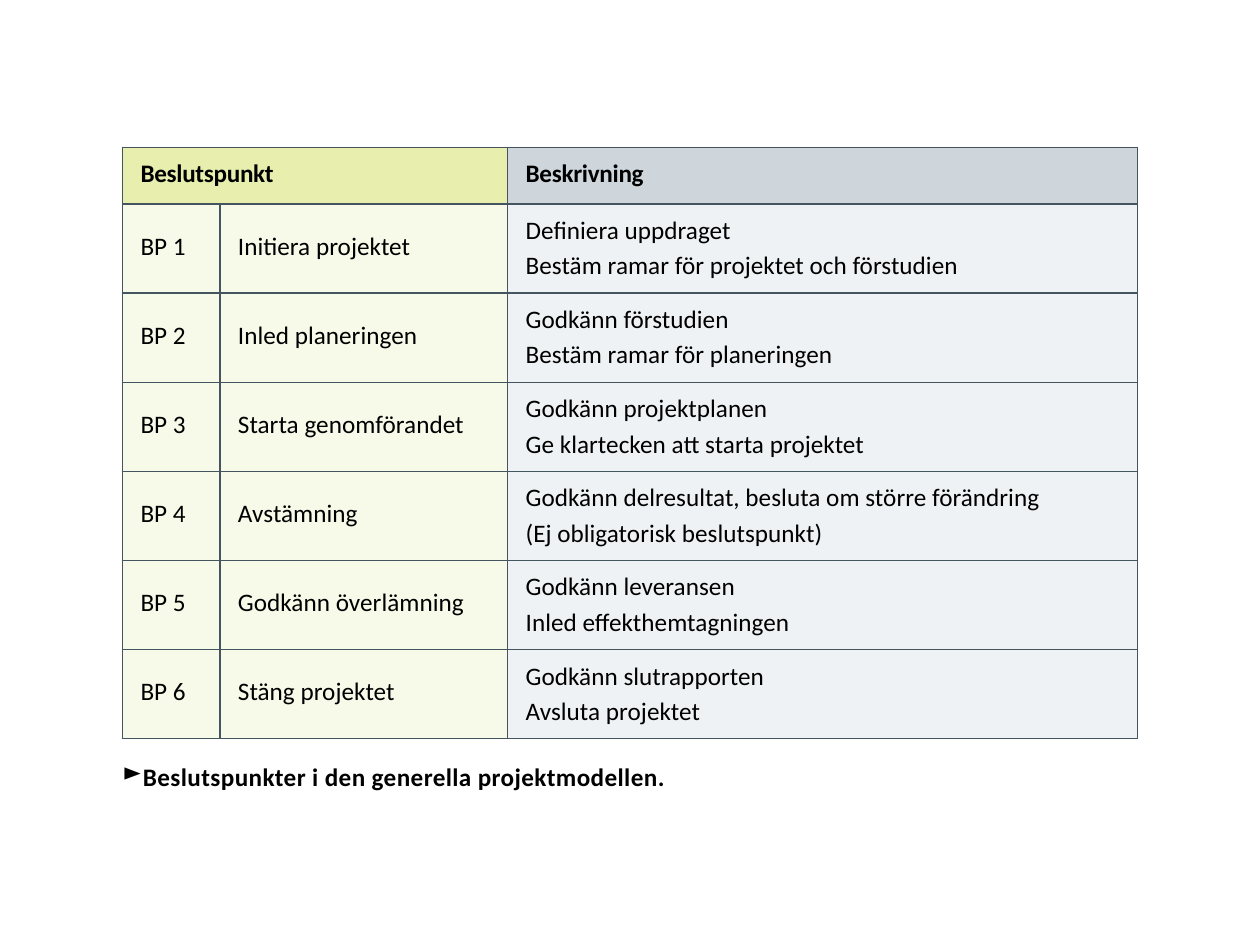
import dataclasses

import lxml.etree
import pptx
import pptx.dml.color
import pptx.enum.text
import pptx.oxml.ns
import pptx.util

Inches = pptx.util.Inches
qn = pptx.oxml.ns.qn


@dataclasses.dataclass(frozen=True)
class Theme:
    font: str = "Calibri"
    size: float = 8
    text: str = "000000"
    border: str = "45555F"
    border_width: float = 0.5
    point_head: str = "E8EEAE"
    point_body: str = "F7FAE8"
    description_head: str = "CED6DC"
    description_body: str = "EFF2F4"


def rgb(value):
    return pptx.dml.color.RGBColor.from_string(value)


def write(p, text, *, theme, bold=False, spacing=0):
    """Add a run; spacing is in hundredths of a point."""
    r = p.add_run()
    r.text = text
    r.font.name = theme.font
    r.font.size = pptx.util.Pt(theme.size)
    r.font.bold = bold
    r.font.color.rgb = rgb(theme.text)
    if spacing:
        r.font._element.set("spc", str(spacing))


class SlideBuilder:
    def __init__(self, prs, theme):
        self.theme = theme
        self.slide = prs.slides.add_slide(prs.slide_layouts[6])

    def table(self, left, top, widths, heights):
        shape = self.slide.shapes.add_table(
            len(heights), len(widths), left, top, sum(widths), sum(heights))
        table = shape.table
        table.first_row = table.horz_banding = False
        for column, width in zip(table.columns, widths):
            column.width = width
        for row, height in zip(table.rows, heights):
            row.height = height
        return table

    def cell(self, cell, lines, fill, top=0.05, **style):
        cell.margin_left = Inches(0.08)
        cell.margin_right = cell.margin_bottom = 0
        cell.margin_top = Inches(top)
        cell.fill.solid()
        cell.fill.fore_color.rgb = rgb(fill)
        self.borders(cell)
        tf = cell.text_frame
        for i, line in enumerate(lines):
            p = tf.add_paragraph() if i else tf.paragraphs[0]
            if i:
                p.space_before = pptx.util.Pt(1.4)
            write(p, line, theme=self.theme, **style)

    def borders(self, cell):
        tc_pr = cell._tc.get_or_add_tcPr()
        width = str(pptx.util.Pt(self.theme.border_width))
        for i, side in enumerate(("a:lnL", "a:lnR", "a:lnT", "a:lnB")):
            ln = lxml.etree.Element(qn(side), w=width)
            fill = lxml.etree.SubElement(ln, qn("a:solidFill"))
            lxml.etree.SubElement(fill, qn("a:srgbClr"), val=self.theme.border)
            tc_pr.insert(i, ln)

    def caption(self, text, left, top, width, height):
        tf = self.slide.shapes.add_textbox(left, top, width, height).text_frame
        tf.word_wrap = True
        tf.margin_left = tf.margin_right = tf.margin_bottom = 0
        tf.margin_top = Inches(0.02)
        p = tf.paragraphs[0]
        p_pr = p._p.get_or_add_pPr()
        p_pr.set("marL", str(Inches(0.09)))
        p_pr.set("indent", str(Inches(-0.08)))
        lxml.etree.SubElement(p_pr, qn("a:buChar"), char="►")
        tabs = lxml.etree.SubElement(p_pr, qn("a:tabLst"))
        lxml.etree.SubElement(tabs, qn("a:tab"), pos=str(Inches(0.09)), algn="l")
        write(p, text, theme=self.theme, bold=True, spacing=10)


DECISIONS = [
    ("Initiera projektet",
     ["Definiera uppdraget", "Bestäm ramar för projektet och förstudien"]),
    ("Inled planeringen",
     ["Godkänn förstudien", "Bestäm ramar för planeringen"]),
    ("Starta genomförandet",
     ["Godkänn projektplanen", "Ge klartecken att starta projektet"]),
    ("Avstämning",
     ["Godkänn delresultat, besluta om större förändring",
      "(Ej obligatorisk beslutspunkt)"]),
    ("Godkänn överlämning",
     ["Godkänn leveransen", "Inled effekthemtagningen"]),
    ("Stäng projektet",
     ["Godkänn slutrapporten", "Avsluta projektet"]),
]


def main():
    prs = pptx.Presentation()
    prs.slide_width, prs.slide_height = Inches(5.56), Inches(4.17)
    theme = Theme()
    s = SlideBuilder(prs, theme)

    # Table grid: a header and equal rows for the decision points
    widths = [Inches(w) for w in (0.43, 1.27, 2.78)]
    row_height = Inches(2.36) // len(DECISIONS)
    heights = [Inches(0.25)] + [row_height] * len(DECISIONS)
    table = s.table(Inches(0.54), Inches(0.65), widths, heights)

    # Header row
    headers = [(["Beslutspunkt"], theme.point_head),
               ([], theme.point_head),
               (["Beskrivning"], theme.description_head)]
    for column, (lines, fill) in enumerate(headers):
        s.cell(table.cell(0, column), lines, fill, bold=True, spacing=-10)
    table.cell(0, 0).merge(table.cell(0, 1))

    # Decision points
    for row, (name, description) in enumerate(DECISIONS, start=1):
        s.cell(table.cell(row, 0), [f"BP {row}"], theme.point_body, top=0.12)
        s.cell(table.cell(row, 1), [name], theme.point_body, top=0.12)
        s.cell(table.cell(row, 2), description, theme.description_body)

    # Caption
    s.caption("Beslutspunkter i den generella projektmodellen.",
              Inches(0.53), Inches(3.34), Inches(2.48), Inches(0.16))

    prs.save("out.pptx")


if __name__ == "__main__":
    main()
